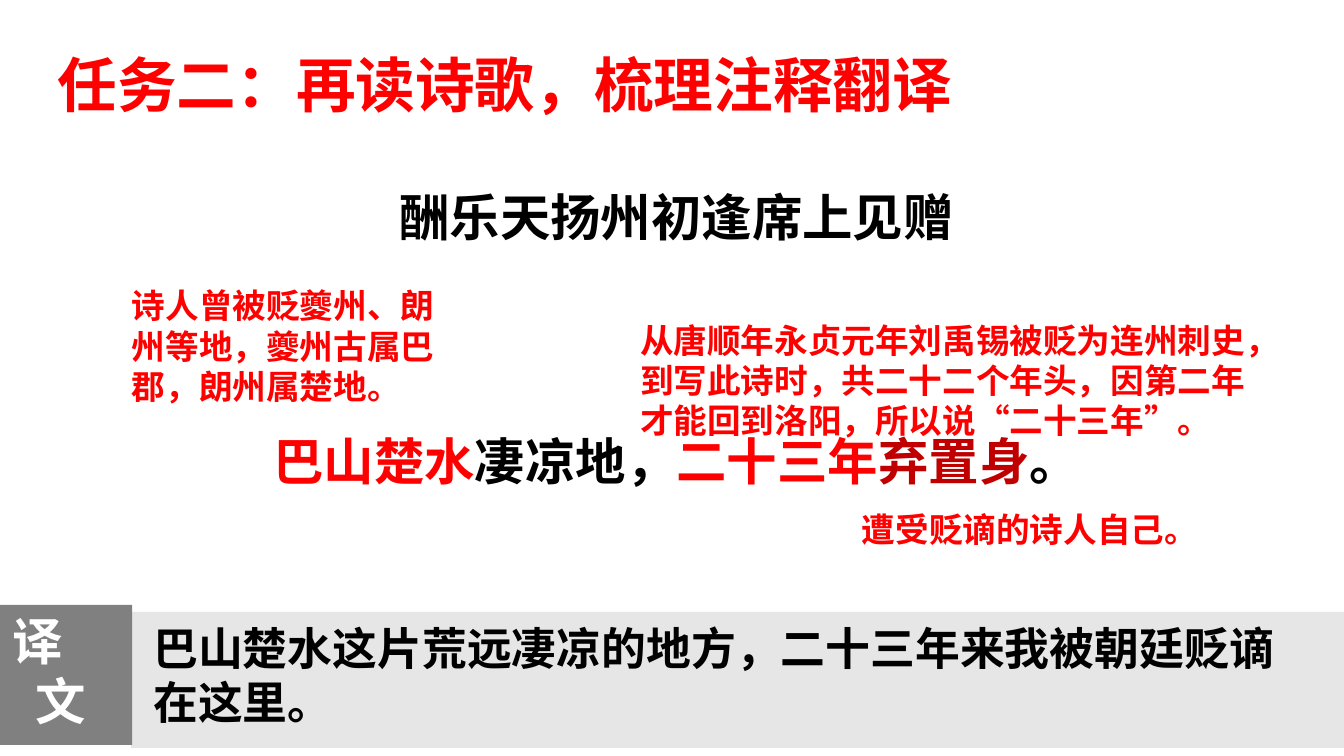
from dataclasses import dataclass

from lxml import etree
from pptx import Presentation
from pptx.dml.color import RGBColor
from pptx.enum.shapes import MSO_SHAPE
from pptx.enum.text import MSO_ANCHOR, MSO_AUTO_SIZE, PP_ALIGN
from pptx.oxml.ns import qn
from pptx.util import Inches, Pt

RECT = MSO_SHAPE.RECTANGLE
TOP, MIDDLE = MSO_ANCHOR.TOP, MSO_ANCHOR.MIDDLE
LEFT, CENTER = PP_ALIGN.LEFT, PP_ALIGN.CENTER
FIXED = MSO_AUTO_SIZE.NONE
TITLE_ONLY = 5


@dataclass(frozen=True)
class Theme:
    font: str = "Noto Sans CJK SC"
    red: str = "FF0000"
    dark: str = "C00000"
    black: str = "000000"
    white: str = "FFFFFF"
    band: str = "E6E6E6"
    tab: str = "808080"
    head: float = 42.6
    poem: int = 36
    prose: int = 32
    note: int = 24


THEME = Theme()


def style(para, size, color, align=LEFT):
    para.alignment = align
    font = para.font
    font.name, font.size, font.bold = THEME.font, Pt(size), True
    font.color.rgb = RGBColor.from_string(color)
    base = para._p.pPr.find(qn("a:defRPr"))
    etree.SubElement(base, qn("a:ea"), typeface=THEME.font)


def setup(frame, pad=(0.1, 0.05), anchor=TOP):
    """Fix the frame's wrapping, insets (side, top and bottom) and anchor."""
    frame.word_wrap, frame.auto_size = True, FIXED
    frame.vertical_anchor = anchor
    frame.margin_left = frame.margin_right = Inches(pad[0])
    frame.margin_top = frame.margin_bottom = Inches(pad[1])


def fill_lines(frame, lines, size, color, align=LEFT):
    for i, line in enumerate(lines):
        para = frame.add_paragraph() if i else frame.paragraphs[0]
        para.text = line
        style(para, size, color, align)


def add_text(slide, box, lines, size, color, pad=(0.1, 0.05), align=LEFT):
    frame = slide.shapes.add_textbox(*map(Inches, box)).text_frame
    setup(frame, pad)
    fill_lines(frame, lines, size, color, align)
    return frame


def add_rect(slide, box, color):
    shape = slide.shapes.add_shape(RECT, *map(Inches, box))
    shape.shadow.inherit = False
    shape.fill.solid()
    shape.fill.fore_color.rgb = RGBColor.from_string(color)
    shape.line.fill.background()
    return shape


def set_title(slide, box, text):
    title = slide.shapes.title
    title.left, title.top, title.width, title.height = map(Inches, box)
    setup(title.text_frame, anchor=MIDDLE)
    fill_lines(title.text_frame, [text], THEME.head, THEME.red)


def add_poem(slide, box, name, verse):
    """Set the poem's name above a verse made of coloured parts."""
    frame = add_text(slide, box, [name, ""], THEME.poem, THEME.black,
                     (0.07, 0.04), CENTER)
    para = frame.paragraphs[1]
    para.space_before = Pt(131)
    for text, color in verse:
        run = para.add_run()
        run.text = text
        run.font.color.rgb = RGBColor.from_string(color)


def add_tab(slide, box, marks):
    """Draw the side tab with one stepped character per line."""
    frame = add_rect(slide, box, THEME.tab).text_frame
    setup(frame, (0, 0), MIDDLE)
    frame.margin_bottom = Inches(0.08)
    fill_lines(frame, marks, THEME.poem, THEME.white)
    for i, para in enumerate(frame.paragraphs):
        para.line_spacing = Pt(43)
        para._p.pPr.set("marL", str(Inches(0.22 + 0.23 * i)))


def main():
    deck = Presentation()
    deck.slide_width, deck.slide_height = Inches(13.33), Inches(7.5)
    slide = deck.slides.add_slide(deck.slide_layouts[TITLE_ONLY])

    set_title(slide, (0.47, 0.35, 12.86, 0.96), "任务二：再读诗歌，梳理注释翻译")
    add_poem(slide, (0.34, 1.81, 12.74, 4.26), "酬乐天扬州初逢席上见赠", [
        ("巴山楚水", THEME.red),
        ("凄凉地，", THEME.black),
        ("二十三年", THEME.red),
        ("弃置身", THEME.dark),
        ("。", THEME.black),
    ])

    add_rect(slide, (1.3, 6.07, 12.21, 1.35), THEME.band)
    add_text(slide, (1.52, 6.16, 11.81, 1.08),
             ["巴山楚水这片荒远凄凉的地方，二十三年来我被朝廷贬谪", "在这里。"],
             THEME.prose, THEME.black, (0, 0))
    add_tab(slide, (-0.1, 6, 1.41, 1.39), "译文")

    notes = [
        ((1.21, 2.78, 3.39, 1.31),
         "诗人曾被贬夔州、朗州等地，夔州古属巴郡，朗州属楚地。"),
        ((6.25, 3.12, 6.46, 1.31),
         "从唐顺年永贞元年刘禹锡被贬为连州刺史，到写此诗时，共二十二个年头，"
         "因第二年才能回到洛阳，所以说“二十三年”。"),
        ((8.45, 5, 4, 0.5), "遭受贬谪的诗人自己。"),
    ]
    for box, text in notes:
        add_text(slide, box, [text], THEME.note, THEME.red)

    deck.save("out.pptx")


if __name__ == "__main__":
    main()
